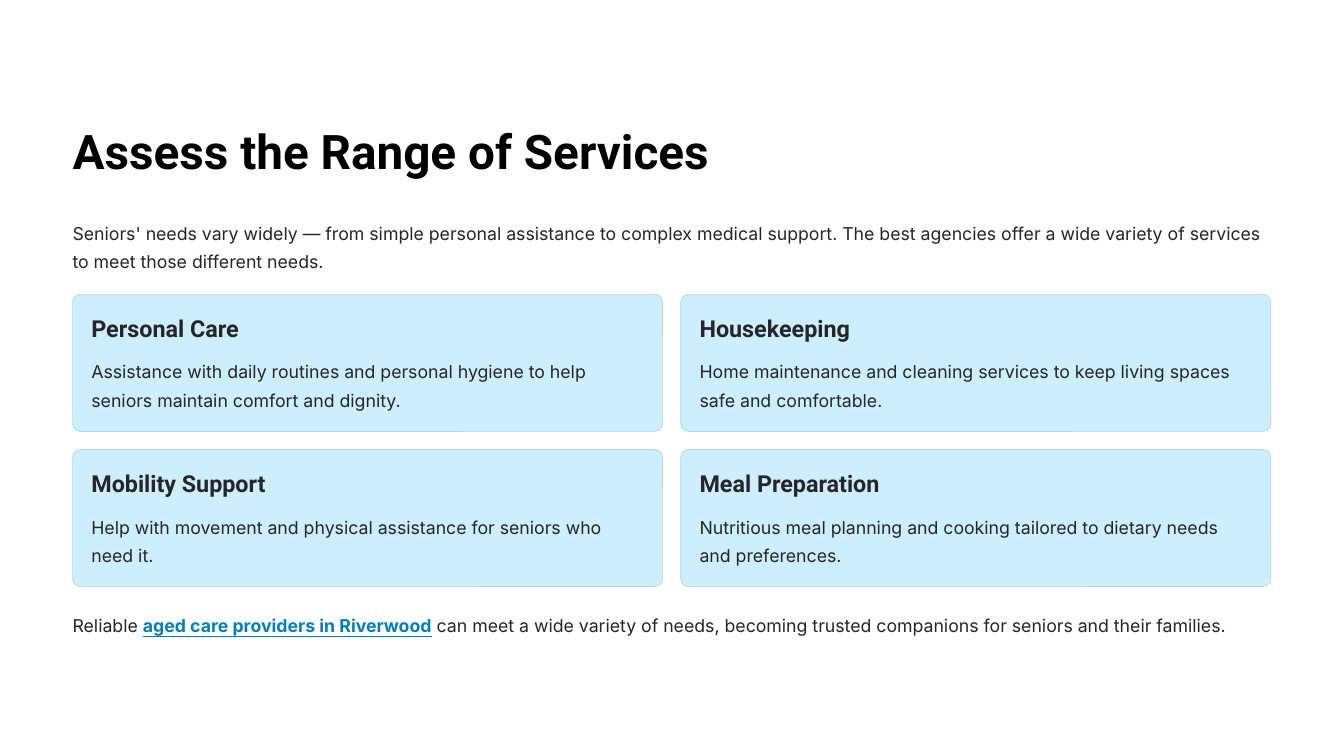
from pptx import Presentation
from pptx.dml.color import RGBColor
from pptx.enum.shapes import MSO_SHAPE
from pptx.util import Pt

ROUNDED = MSO_SHAPE.ROUNDED_RECTANGLE
EMU_PER_PX = 4572
SLIDE_W, SLIDE_H = 2000, 1125
MARGIN, CONTENT_W = 108, 1783
CARD_W, CARD_H, GAP, PAD = 878, 204, 27, 28
HEADING_FONT, BODY_FONT = "Roboto", "Inter"
BLACK, INK, LINK = "000000", "272525", "007EBD"
CARD_FILL, CARD_LINE = "CCEEFF", "B2D4E5"

TITLE = "Assess the Range of Services"
INTRO = (
    "Seniors' needs vary widely — from simple personal assistance to complex medical "
    "support. The best agencies offer a wide variety of services to meet those different needs."
)
SERVICES = [
    ("Personal Care",
     "Assistance with daily routines and personal hygiene to help seniors maintain "
     "comfort and dignity."),
    ("Housekeeping",
     "Home maintenance and cleaning services to keep living spaces safe and comfortable."),
    ("Mobility Support",
     "Help with movement and physical assistance for seniors who need it."),
    ("Meal Preparation",
     "Nutritious meal planning and cooking tailored to dietary needs and preferences."),
]
CLOSING = [
    ("Reliable ", False),
    ("aged care providers in Riverwood", True),
    (" can meet a wide variety of needs, becoming trusted companions for seniors "
     "and their families.", False),
]


def px(*lengths):
    return [length * EMU_PER_PX for length in lengths]


def color(hex_code):
    return RGBColor.from_string(hex_code)


def add_paragraph_box(slide, box, line_spacing, wrap):
    frame = slide.shapes.add_textbox(*px(*box)).text_frame
    frame.margin_left = frame.margin_top = frame.margin_right = frame.margin_bottom = 0
    frame.word_wrap = wrap
    paragraph = frame.paragraphs[0]
    paragraph.line_spacing = line_spacing
    return paragraph


def add_run(paragraph, text, font_name, size, hex_code, bold=False, underline=False):
    run = paragraph.add_run()
    run.text = text
    run.font.name = font_name
    run.font.size = Pt(size)
    run.font.color.rgb = color(hex_code)
    run.font.bold = bold
    run.font.underline = underline


def add_heading(slide, box, text, size, hex_code):
    paragraph = add_paragraph_box(slide, box, 1.04, False)
    add_run(paragraph, text, HEADING_FONT, size, hex_code, bold=True)


def add_body(slide, box, text):
    paragraph = add_paragraph_box(slide, box, 1.33, True)
    add_run(paragraph, text, BODY_FONT, 9.5, INK)


def add_header(slide, left, top, width):
    add_heading(slide, (left, top, width, 89), TITLE, 25.5, BLACK)
    add_body(slide, (left, top + 143, width, 87), INTRO)


def add_service_card(slide, left, top, width, height, service, description):
    card = slide.shapes.add_shape(ROUNDED, *px(left, top, width, height))
    card.adjustments[0] = 0.056
    card.shadow.inherit = False
    card.fill.solid()
    card.fill.fore_color.rgb = color(CARD_FILL)
    card.line.color.rgb = color(CARD_LINE)
    card.line.width = Pt(0.38)
    text_left, text_w = left + PAD, width - 2 * PAD
    add_heading(slide, (text_left, top + PAD, text_w, 44), service, 12.5, INK)
    add_body(slide, (text_left, top + 89, text_w, 87), description)


def add_service_grid(slide, left, top):
    for index, (service, description) in enumerate(SERVICES):
        row, column = divmod(index, 2)
        card_left = left + column * (CARD_W + GAP)
        card_top = top + row * (CARD_H + GAP)
        add_service_card(slide, card_left, card_top, CARD_W, CARD_H, service, description)


def add_closing(slide, left, top, width):
    paragraph = add_paragraph_box(slide, (left, top, width, 43), 1.33, False)
    for text, linked in CLOSING:
        add_run(paragraph, text, BODY_FONT, 9.5, LINK if linked else INK, linked, linked)


def main():
    deck = Presentation()
    deck.slide_width, deck.slide_height = px(SLIDE_W, SLIDE_H)
    slide = deck.slides.add_slide(deck.slide_layouts[6])
    add_header(slide, MARGIN, 178, CONTENT_W)
    add_service_grid(slide, MARGIN, 438)
    add_closing(slide, MARGIN, 905, 1883)
    deck.save("out.pptx")


if __name__ == "__main__":
    main()
